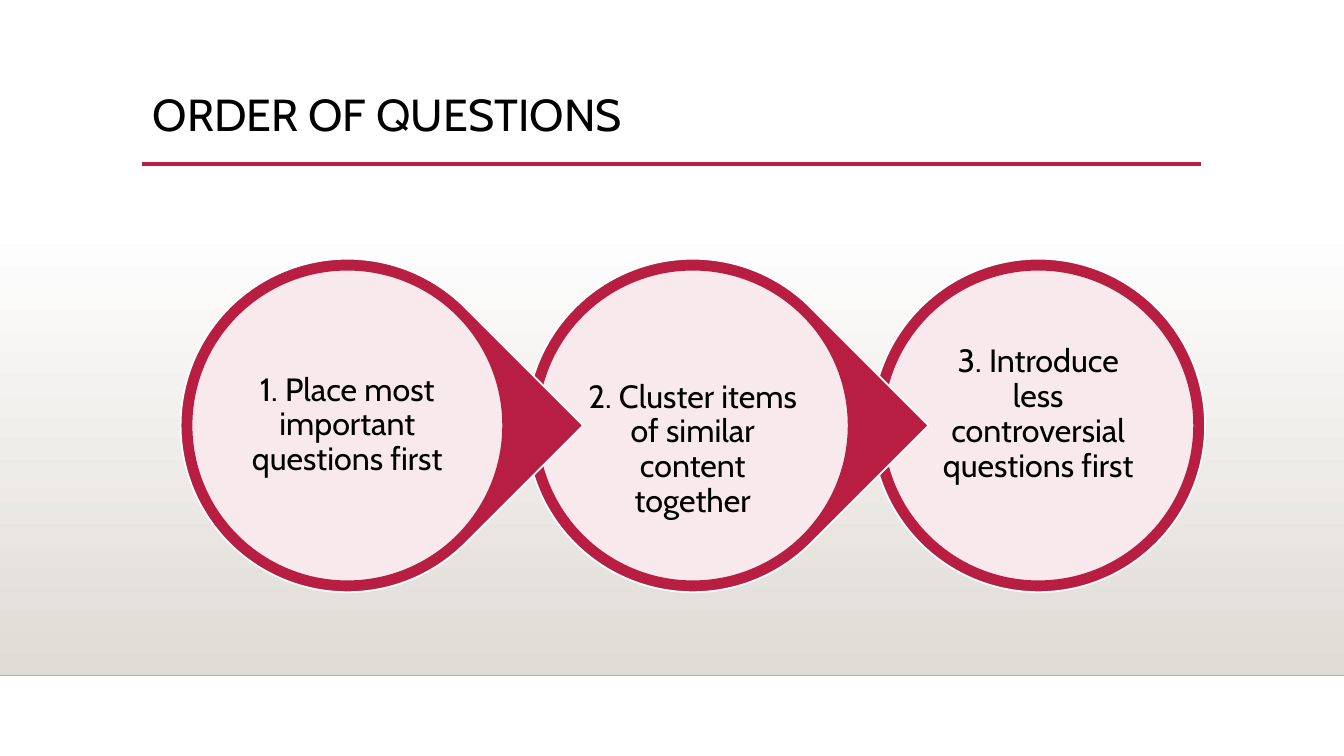
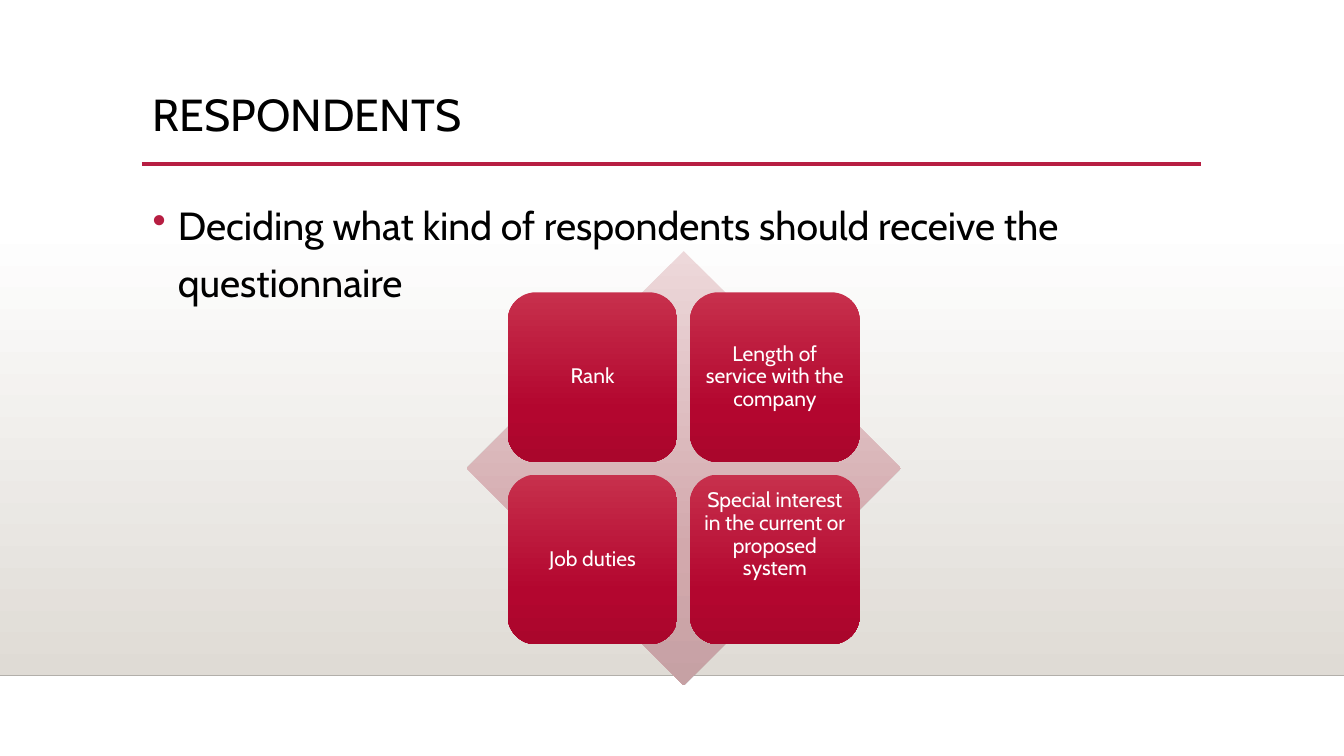
import lxml.etree
import pptx
import pptx.dml.color
import pptx.enum.shapes
import pptx.enum.text
import pptx.oxml.ns
import pptx.util

RGBColor = pptx.dml.color.RGBColor
SHAPE = pptx.enum.shapes.MSO_SHAPE
ALIGN = pptx.enum.text.PP_ALIGN
ANCHOR = pptx.enum.text.MSO_ANCHOR
qn = pptx.oxml.ns.qn

# Square grid: 160 columns by 90 rows
COLUMNS, ROWS = 160, 90
CELL = pptx.util.Inches(7.5) / ROWS

FONT = "Cabin"
BLACK = RGBColor(0x00, 0x00, 0x00)
WHITE = RGBColor(0xFF, 0xFF, 0xFF)
CRIMSON = RGBColor(0xB7, 0x1E, 0x42)
BLUSH = RGBColor(0xF8, 0xE9, 0xEC)
FLOOR_LINE = RGBColor(0xB2, 0xAF, 0xAA)
BAND_STOPS = [(0, WHITE), (100, RGBColor(0xDF, 0xDB, 0xD5))]
DIAMOND_STOPS = [(0, RGBColor(0xED, 0xD8, 0xDA)),
                 (69, RGBColor(0xD2, 0xA8, 0xAC)),
                 (100, RGBColor(0xC6, 0xA1, 0xA4))]
TILE_STOPS = [(0, RGBColor(0xC7, 0x30, 0x4C)),
              (69, RGBColor(0xB3, 0x06, 0x2F)),
              (100, RGBColor(0xAA, 0x06, 0x2C))]

LEFT_MARGIN = 17
FLOOR = 80.4


def cells(count):
    return pptx.util.Emu(round(count * CELL))


# Basic elements
def add_shape(slide, kind, left, top, width, height, line=None):
    shape = slide.shapes.add_shape(
        kind, cells(left), cells(top), cells(width), cells(height))
    shape.shadow.inherit = False
    if line is None:
        shape.line.fill.background()
    else:
        shape.line.color.rgb = line
        shape.line.width = pptx.util.Pt(1.25)
    return shape


def fill_solid(shape, color):
    shape.fill.solid()
    shape.fill.fore_color.rgb = color


def fill_downward(shape, stops):
    """Fill with a gradient that runs from top to bottom."""
    shape.fill.gradient()
    shape.fill.gradient_angle = 270
    stop_list = shape.element.spPr.find(".//" + qn("a:gsLst"))
    for old_stop in list(stop_list):
        stop_list.remove(old_stop)
    for percent, color in stops:
        stop = lxml.etree.SubElement(stop_list, qn("a:gs"), pos=str(percent * 1000))
        lxml.etree.SubElement(stop, qn("a:srgbClr"), val=str(color))


def add_rule(slide, left, right, row, color, points):
    rule = slide.shapes.add_connector(
        pptx.enum.shapes.MSO_CONNECTOR.STRAIGHT,
        cells(left), cells(row), cells(right), cells(row))
    rule.line.color.rgb = color
    rule.line.width = pptx.util.Pt(points)
    lxml.etree.SubElement(rule.element.spPr, qn("a:effectLst"))


def add_run(paragraph, text, size, color):
    run = paragraph.add_run()
    run.text = text
    run.font.name = FONT
    run.font.size = pptx.util.Pt(size)
    run.font.color.rgb = color


def add_text_box(slide, left, top, width, height, line_spacing):
    """Add a wrapping text box and return its first paragraph."""
    box = slide.shapes.add_textbox(
        cells(left), cells(top), cells(width), cells(height))
    box.text_frame.word_wrap = True
    paragraph = box.text_frame.paragraphs[0]
    paragraph.line_spacing = line_spacing
    return paragraph


def write_centred(shape, text, size, color, inset, shift=0):
    """Centre text in a shape, moved down by shift rows (up if negative)."""
    frame = shape.text_frame
    frame.word_wrap = True
    frame.vertical_anchor = ANCHOR.MIDDLE
    frame.margin_left = frame.margin_right = cells(inset)
    frame.margin_top = cells(inset + 2 * max(shift, 0))
    frame.margin_bottom = cells(inset + 2 * max(-shift, 0))
    paragraph = frame.paragraphs[0]
    paragraph.alignment = ALIGN.CENTER
    paragraph.line_spacing = 0.9
    add_run(paragraph, text, size, color)


# Shared slide frame
def add_framed_slide(presentation, title):
    slide = presentation.slides.add_slide(presentation.slide_layouts[6])
    band_top = 26.5
    band = add_shape(slide, SHAPE.RECTANGLE, 0, band_top, COLUMNS, FLOOR - band_top)
    fill_downward(band, BAND_STOPS)
    add_rule(slide, 0, COLUMNS, FLOOR, FLOOR_LINE, 1)
    add_rule(slide, 16.9, 143, 19.5, CRIMSON, 2.5)
    paragraph = add_text_box(slide, LEFT_MARGIN, 10.5, 126, 13.8, 0.9)
    add_run(paragraph, title, 32, BLACK)
    return slide


# Content elements
def add_bullet(slide, text):
    paragraph = add_text_box(slide, LEFT_MARGIN, 22.3, 136.2, 10.3, 1.2)
    properties = paragraph._p.get_or_add_pPr()
    indent = pptx.util.Inches(0.25)
    properties.set("marL", str(indent))
    properties.set("indent", str(-indent))
    bullet_color = lxml.etree.SubElement(properties, qn("a:buClr"))
    lxml.etree.SubElement(bullet_color, qn("a:srgbClr"), val=str(CRIMSON))
    lxml.etree.SubElement(properties, qn("a:buChar"), char="•")
    add_run(paragraph, text, 28, BLACK)


def add_step_circle(slide, left, text, shift, points_right):
    size, rim, middle_row = 39.7, 1.3, 50.65
    top = middle_row - size / 2
    kind = SHAPE.TEAR if points_right else SHAPE.OVAL
    ring = add_shape(slide, kind, left, top, size, size, WHITE)
    ring.rotation = 45 if points_right else 0
    fill_solid(ring, CRIMSON)
    disc_size = size - 2 * rim
    disc = add_shape(slide, SHAPE.OVAL, left + rim, top + rim,
                     disc_size, disc_size, CRIMSON)
    fill_solid(disc, BLUSH)
    write_centred(disc, text, 23, BLACK, 0.3, shift)


def add_step_chain(slide, steps):
    """Draw the steps from last to first, so that each tip overlaps the next."""
    first_left, pitch = 21.5, 41.13
    last = len(steps) - 1
    for index in range(last, -1, -1):
        text, shift = steps[index]
        add_step_circle(slide, first_left + index * pitch, text, shift, index < last)


def add_tile_matrix(slide, tiles):
    """Draw a two by two set of tiles centred on a diamond."""
    centre_column, centre_row, diamond_size = 81.4, 55.75, 51.7
    tile_size, gap = 20.2, 1.5
    diamond = add_shape(slide, SHAPE.DIAMOND, centre_column - diamond_size / 2,
                        centre_row - diamond_size / 2, diamond_size, diamond_size)
    fill_downward(diamond, DIAMOND_STOPS)
    offset = tile_size + gap / 2
    for index, (text, shift) in enumerate(tiles):
        row, column = divmod(index, 2)
        tile = add_shape(slide, SHAPE.ROUNDED_RECTANGLE,
                         centre_column - offset + column * (tile_size + gap),
                         centre_row - offset + row * (tile_size + gap),
                         tile_size, tile_size)
        fill_downward(tile, TILE_STOPS)
        write_centred(tile, text, 15, WHITE, 0.7, shift)


def main():
    presentation = pptx.Presentation()
    presentation.slide_width = cells(COLUMNS)
    presentation.slide_height = cells(ROWS)

    # Order of questions
    slide = add_framed_slide(presentation, "ORDER OF QUESTIONS")
    add_step_chain(slide, [
        ("1. Place most important questions first", 0),
        ("2. Cluster items of similar content together", 2.9),
        ("3. Introduce less controversial questions first", -1.3),
    ])

    # Respondents
    slide = add_framed_slide(presentation, "RESPONDENTS")
    add_bullet(slide, "Deciding what kind of respondents should receive the questionnaire")
    add_tile_matrix(slide, [
        ("Rank", 0),
        ("Length of service with the company", 0),
        ("Job duties", 0),
        ("Special interest in the current or proposed system", -2.9),
    ])

    presentation.save("out.pptx")


if __name__ == "__main__":
    main()
